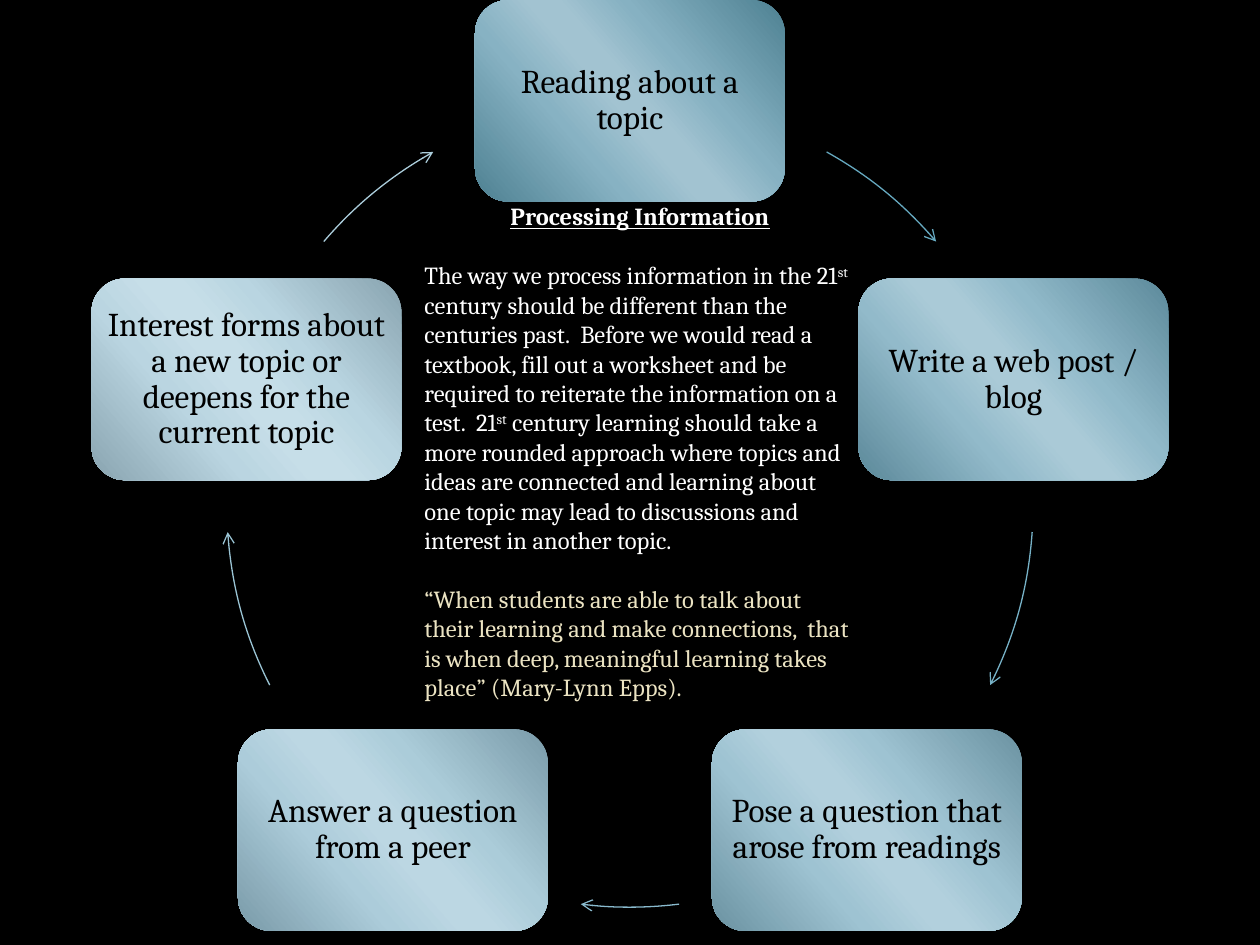
from math import cos, radians, sin

from lxml.etree import SubElement
from pptx import Presentation
from pptx.dml.color import RGBColor
from pptx.enum.shapes import MSO_SHAPE as Shape
from pptx.enum.text import MSO_ANCHOR as Anchor, MSO_AUTO_SIZE as AutoSize, PP_ALIGN as Align
from pptx.oxml.ns import qn
from pptx.util import Inches, Pt

FONT = "Cambria"
CENTER_X, CENTER_Y, RADIUS = 5, 4, 3.2
STEP_WIDTH, STEP_HEIGHT = 2.46, 1.6
STOP_POSITIONS = (0, 33, 47, 53, 68, 100)

# Clockwise from the top: text, gradient (edge, shade, highlight, shade),
# arrow colour, arrow start and end in degrees from the top
STEPS = [
    ("Reading about a topic",
     ("4E8192", "86B1C2", "A2C3D1", "87B2C3"), "66A9C0", 29.2, 49.4),
    ("Write a web post / blog",
     ("5C899A", "91BACA", "AACAD7", "92BACA"), "77B2C7", 94, 116.7),
    ("Pose a question that arose from readings",
     ("6B92A1", "9EC3D2", "B2D0DD", "9EC3D2"), "89BACE", 173, 187),
    ("Answer a question from a peer",
     ("7A9BA9", "ABCCD9", "BCD7E3", "ACCCDA"), "9AC4D4", 243.3, 266),
    ("Interest forms about a new topic or deepens for the current topic",
     ("89A4B0", "B9D5E1", "C6DEE8", "BAD5E1"), "ABCDDB", 310.6, 330.8),
]

HEADING = "Processing Information"
# Text pieces alternate between normal and superscript
EXPLANATION = [
    "The way we process information in the 21", "st",
    " century should be different than the centuries past.  Before we would read a "
    "textbook, fill out a worksheet and be required to reiterate the information on a "
    "test.  21", "st",
    " century learning should take a more rounded approach where topics and ideas are "
    "connected and learning about one topic may lead to discussions and interest in "
    "another topic.",
]
QUOTE = ("“When students are able to talk about their learning and make connections,  "
         "that is when deep, meaningful learning takes place” (Mary-Lynn Epps).")


def color(value):
    return RGBColor.from_string(value)


def set_all(target, values):
    for name, value in values.items():
        setattr(target, name, value)


def add_run(paragraph, text, size, hex_color, superscript=False, **extra):
    run = paragraph.add_run()
    run.text = text
    set_all(run.font, {"name": FONT, "size": Pt(size), **extra})
    run.font.color.rgb = color(hex_color)
    if superscript:
        run.font._element.set("baseline", "30000")


def fill_gradient(shape, colors, angle=139):
    shape.fill.gradient()
    gradient = shape._element.spPr.find(qn("a:gradFill"))
    for child in list(gradient):
        gradient.remove(child)
    stops = SubElement(gradient, qn("a:gsLst"))
    edge, first_shade, highlight, second_shade = colors
    band = (edge, first_shade, highlight, highlight, second_shade, edge)
    for position, value in zip(STOP_POSITIONS, band):
        stop = SubElement(stops, qn("a:gs"), pos=str(position * 1000))
        SubElement(stop, qn("a:srgbClr"), val=value)
    SubElement(gradient, qn("a:lin"), ang=str(angle * 60000), scaled="1")


def add_step(slide, angle, text, colors):
    left = CENTER_X + RADIUS * sin(radians(angle)) - STEP_WIDTH / 2
    top = CENTER_Y - RADIUS * cos(radians(angle)) - STEP_HEIGHT / 2
    step = slide.shapes.add_shape(Shape.ROUNDED_RECTANGLE, Inches(left), Inches(top),
                                  Inches(STEP_WIDTH), Inches(STEP_HEIGHT))
    step.shadow.inherit = False
    step.line.fill.background()
    fill_gradient(step, colors)
    set_all(step.text_frame, {
        "margin_left": 0, "margin_right": 0, "margin_top": 0, "margin_bottom": 0,
        "vertical_anchor": Anchor.MIDDLE, "word_wrap": True})
    label = step.text_frame.paragraphs[0]
    set_all(label, {"alignment": Align.CENTER, "line_spacing": 0.9})
    add_run(label, text, 19, "000000")


def add_cycle_arrow(slide, start, end, hex_color):
    arc = slide.shapes.add_shape(
        Shape.ARC, Inches(CENTER_X - RADIUS), Inches(CENTER_Y - RADIUS),
        Inches(2 * RADIUS), Inches(2 * RADIUS))
    arc.shadow.inherit = False
    arc.fill.background()
    # Arc angles run clockwise from the right, in units of 0.6 per degree
    for index, angle in enumerate((start, end)):
        arc.adjustments[index] = (angle - 90) % 360 * 0.6
    arc.line.width = Pt(0.75)
    arc.line.color.rgb = color(hex_color)
    SubElement(arc.line._get_or_add_ln(), qn("a:tailEnd"), type="arrow")


def add_explanation(slide):
    box = slide.shapes.add_textbox(Inches(3.27), Inches(1.55), Inches(3.62), Inches(4.34))
    frame = box.text_frame
    set_all(frame, {"word_wrap": True, "auto_size": AutoSize.SHAPE_TO_FIT_TEXT})
    heading = frame.paragraphs[0]
    heading.alignment = Align.CENTER
    add_run(heading, HEADING, 14, "FFFFFF", bold=True, underline=True)
    for pieces, hex_color in ((EXPLANATION, "FFFFFF"), ([QUOTE], "EBE3C2")):
        paragraph = frame.add_paragraph()
        paragraph.space_before = Pt(16.8)
        for index, piece in enumerate(pieces):
            add_run(paragraph, piece, 14, hex_color, superscript=index % 2 == 1)


def main():
    prs = Presentation()
    set_all(prs, {"slide_width": Inches(10), "slide_height": Inches(7.5)})
    slide = prs.slides.add_slide(prs.slide_layouts[6])
    slide.background.fill.solid()
    slide.background.fill.fore_color.rgb = color("000000")

    # Cycle of steps
    for index, (text, colors, arrow_color, start, end) in enumerate(STEPS):
        add_step(slide, index * 360 / len(STEPS), text, colors)
        add_cycle_arrow(slide, start, end, arrow_color)

    # Text in the middle of the cycle
    add_explanation(slide)
    prs.save("out.pptx")


if __name__ == "__main__":
    main()
